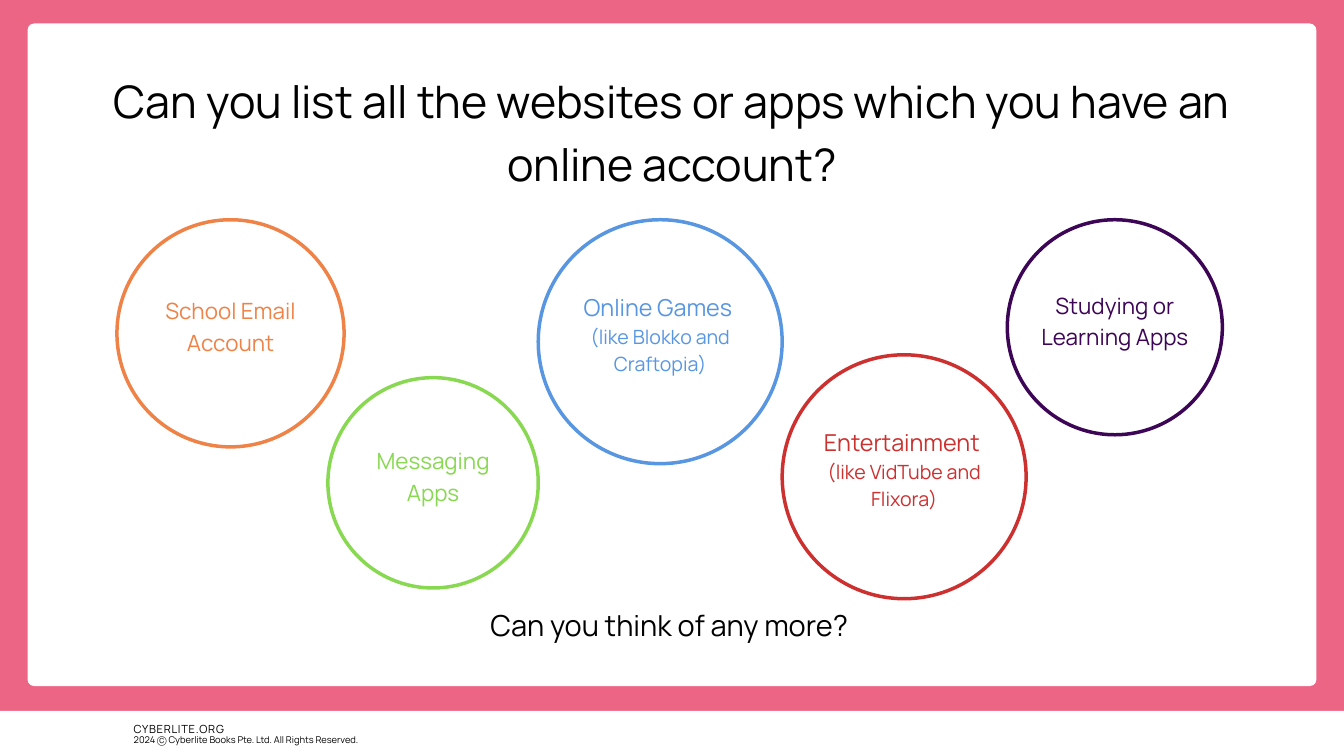
"""Build the slide that asks which online accounts pupils have."""
from pptx import Presentation
from pptx.dml.color import RGBColor
from pptx.enum.shapes import MSO_SHAPE
from pptx.enum.text import MSO_ANCHOR, PP_ALIGN
from pptx.util import Pt

EMU_PER_PX = 9144
FONT = "Manrope"
LINE_RATIO = 1.4
TEXT_LIFT = 0.08
COLORS = {
    "pink": "EC6585", "white": "FFFFFF", "black": "000000",
    "orange": "EF8247", "purple": "3C0555", "blue": "5996E2",
    "red": "CC302F", "green": "88D852",
}
QUESTION = "Can you list all the websites or apps which you have an online account?"
PROMPT = "Can you think of any more? "
SITE = "CYBERLITE.ORG"
COPYRIGHT = "2024 Ⓒ Cyberlite Books Pte. Ltd. All Rights Reserved."
ACCOUNTS = [
    ("orange", 174, 327, 338, [("School Email Account", 24)]),
    ("purple", 1499, 327, 320, [("Studying or Learning Apps", 24)]),
    ("blue", 801, 327, 363, [("Online Games ", 25), ("(like Blokko and Craftopia)", 21)]),
    ("red", 1164, 528, 363, [("Entertainment ", 25), ("(like VidTube and Flixora)", 21)]),
    ("green", 488, 562, 313, [("Messaging Apps", 24)]),
]


def px(length):
    return round(length * EMU_PER_PX)


def rgb(name):
    return RGBColor.from_string(COLORS[name])


def write(frame, lines, color, align=PP_ALIGN.CENTER, anchor=MSO_ANCHOR.TOP, bottom=0):
    frame.word_wrap = True
    frame.vertical_anchor = anchor
    frame.margin_left = frame.margin_right = frame.margin_top = 0
    frame.margin_bottom = px(bottom)
    for index, (words, size) in enumerate(lines):
        paragraph = frame.add_paragraph() if index else frame.paragraphs[0]
        paragraph.alignment = align
        paragraph.line_spacing = Pt(size * LINE_RATIO)
        paragraph.space_before = Pt(0)
        run = paragraph.add_run()
        run.text = words
        run.font.name = FONT
        run.font.size = Pt(size)
        run.font.color.rgb = rgb(color)
    return run


def add_panel(slide, preset, box, outline=None):
    panel = slide.shapes.add_shape(preset, *map(px, box))
    panel.shadow.inherit = False
    panel.fill.solid()
    panel.fill.fore_color.rgb = rgb("white")
    if outline:
        panel.line.color.rgb = rgb(outline)
        panel.line.width = Pt(3.75)
    else:
        panel.line.fill.background()
    return panel


def add_label(slide, box, words, size, align):
    label = slide.shapes.add_textbox(*map(px, box))
    return write(label.text_frame, [(words, size)], "black", align)


def main():
    deck = Presentation()
    deck.slide_width, deck.slide_height = px(2000), px(1125)
    slide = deck.slides.add_slide(deck.slide_layouts[5])
    slide.background.fill.solid()
    slide.background.fill.fore_color.rgb = rgb("pink")

    add_panel(slide, MSO_SHAPE.RECTANGLE, (0, 1058, 2000, 67))
    site = add_label(slide, (199, 1072, 185, 23), SITE, 12, PP_ALIGN.LEFT)
    site._r.get_or_add_rPr().set("spc", "80")
    add_label(slide, (199, 1090, 463, 19), COPYRIGHT, 10, PP_ALIGN.LEFT)

    card = add_panel(slide, MSO_SHAPE.ROUNDED_RECTANGLE, (41, 35, 1918, 986))
    card.adjustments[0] = 0.01

    for color, left, top, diameter, lines in ACCOUNTS:
        circle = add_panel(slide, MSO_SHAPE.OVAL, (left, top, diameter, diameter), color)
        write(circle.text_frame, lines, color, anchor=MSO_ANCHOR.MIDDLE,
              bottom=diameter * TEXT_LIFT)

    title = slide.shapes.title
    title.left, title.top, title.width, title.height = map(px, (130, 97, 1740, 188))
    write(title.text_frame, [(QUESTION, 48)], "black")
    slide.shapes._spTree.append(title._element)
    add_label(slide, (204, 895, 1592, 61), PROMPT, 31, PP_ALIGN.CENTER)

    deck.save("out.pptx")


if __name__ == "__main__":
    main()
